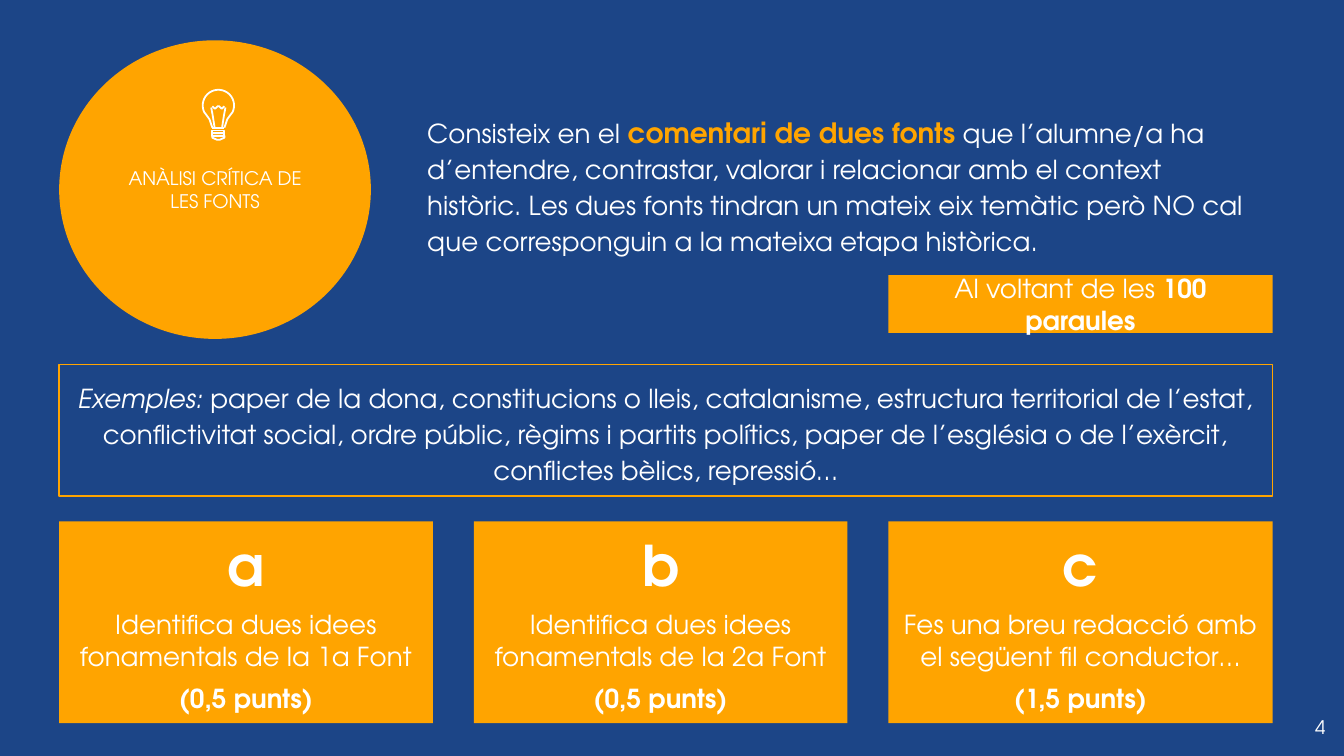
import math

from lxml import etree
from pptx import Presentation
from pptx.dml.color import RGBColor
from pptx.enum.shapes import MSO_CONNECTOR, MSO_SHAPE
from pptx.enum.text import MSO_ANCHOR, MSO_AUTO_SIZE, PP_ALIGN
from pptx.oxml.ns import qn
from pptx.util import Pt

LEFT, CENTER, RIGHT = PP_ALIGN.LEFT, PP_ALIGN.CENTER, PP_ALIGN.RIGHT
TOP, MIDDLE = MSO_ANCHOR.TOP, MSO_ANCHOR.MIDDLE
RECTANGLE, OVAL = MSO_SHAPE.RECTANGLE, MSO_SHAPE.OVAL

FONT = "TeX Gyre Adventor"
COLORS = {"background": "1C4587", "accent": "FFA400", "text": "FFFFFF"}

# Each paragraph is a list of (text, run format) pairs.
TITLE = [[("ANÀLISI CRÍTICA DE LES FONTS", {})]]
DESCRIPTION = [[
    ("Consisteix en el ", {}),
    ("comentari de dues fonts", {"bold": True, "size": 15, "color": "accent"}),
    (" que l’alumne/a ha d’entendre, contrastar, valorar i relacionar amb el "
     "context històric. Les dues fonts tindran un mateix eix temàtic però NO "
     "cal que corresponguin a la mateixa etapa històrica.", {}),
]]
LENGTH = [[("Al voltant de les ", {}), ("100 paraules", {"bold": True})]]
EXAMPLES = [[
    ("Exemples:", {"italic": True}),
    (" paper de la dona, constitucions o lleis, catalanisme, estructura "
     "territorial de l’estat, conflictivitat social, ordre públic, règims i "
     "partits polítics, paper de l’església o de l’exèrcit, conflictes "
     "bèlics, repressió…", {}),
]]
QUESTIONS = [
    ("a", "Identifica dues idees fonamentals de la 1a Font", "(0,5 punts)"),
    ("b", "Identifica dues idees fonamentals de la 2a Font", "(0,5 punts)"),
    ("c", "Fes una breu redacció amb el següent fil conductor…", "(1,5 punts)"),
]
PAGE_NUMBER = [[("4", {})]]

SLIDE_W, SLIDE_H = 720, 405
LEFT_EDGE, RIGHT_EDGE = 31.7, 681.8
CARD_W, CARD_PITCH = 200.2, 222.1
CARD_TOP, CARD_H = 279.4, 108
LAST_CARD_LEFT = LEFT_EDGE + 2 * CARD_PITCH
CIRCLE = (LEFT_EDGE, 21.6, 167, 160)

BULB_X, GLASS_Y, GLASS_R = 117, 56.5, 8.4
BASE_HALF_W, BASE_TOP = 3.2, 68.4


def rgb(name):
    return RGBColor.from_string(COLORS[name])


def write_text(shape, paragraphs, size=14, align=CENTER, anchor=MIDDLE,
               before=0, first_before=0, spacing=1.0):
    frame = shape.text_frame
    frame.word_wrap = True
    frame.auto_size = MSO_AUTO_SIZE.NONE
    frame.vertical_anchor = anchor
    frame.margin_left = frame.margin_right = Pt(7.2)
    frame.margin_top = frame.margin_bottom = Pt(7.2)
    for index, runs in enumerate(paragraphs):
        paragraph = frame.add_paragraph() if index else frame.paragraphs[0]
        paragraph.alignment = align
        paragraph.line_spacing = spacing
        paragraph.space_before = Pt(before if index else first_before)
        for text, style in runs:
            run = paragraph.add_run()
            run.text = text
            run.font.name = FONT
            run.font.size = Pt(style.get("size", size))
            run.font.bold = style.get("bold", False)
            run.font.italic = style.get("italic", False)
            run.font.color.rgb = rgb(style.get("color", "text"))


def add_panel(slide, kind, box, outlined=False):
    panel = slide.shapes.add_shape(kind, *map(Pt, box))
    panel.shadow.inherit = False
    if outlined:
        panel.fill.background()
        panel.line.color.rgb = rgb("accent")
        panel.line.width = Pt(0.75)
    else:
        panel.fill.solid()
        panel.fill.fore_color.rgb = rgb("accent")
        panel.line.fill.background()
    return panel


def add_text_box(slide, box, paragraphs, **style):
    write_text(slide.shapes.add_textbox(*map(Pt, box)), paragraphs, **style)


def mirror(points):
    """Reflect points across the bulb's axis, in reverse order."""
    return [(2 * BULB_X - x, y) for x, y in reversed(points)]


def bulb_strokes():
    """Return (points, closed) for every outline of the bulb."""
    left, right = BULB_X - BASE_HALF_W, BULB_X + BASE_HALF_W
    neck = [(right, BASE_TOP), (121, 66.2), (121.7, 64), (123.5, 61.5)]
    arc = [(BULB_X + GLASS_R * math.cos(math.radians(angle)),
            GLASS_Y + GLASS_R * math.sin(math.radians(angle)))
           for angle in range(25, -206, -10)]
    support = [(115, BASE_TOP), (114, 61.9), (113.2, 57.6)]
    half_filament = [(113.8, 56.9), (115.2, 58.3), (116.6, 56.9)]
    cap = [(left, 72.7), (left, 73.8), (116.3, 74.9)]
    rings = [([(left, y), (right, y), (right, y + 1.4), (left, y + 1.4)], True)
             for y in (69.9, 71.3)]
    return rings + [
        (neck + arc + mirror(neck), False),
        (support, False),
        (mirror(support), False),
        (half_filament + mirror(half_filament), False),
        (cap + mirror(cap), True),
    ]


def draw_bulb(slide):
    bulb = slide.shapes.add_group_shape().shapes
    strokes = []
    for points, closed in bulb_strokes():
        grid = [(x * 100, y * 100) for x, y in points]
        builder = bulb.build_freeform(*grid[0], scale=Pt(0.01))
        builder.add_line_segments(grid[1:], close=closed)
        outline = builder.convert_to_shape()
        outline.fill.background()
        outline.shadow.inherit = False
        strokes.append(outline)
    base = bulb.add_connector(
        MSO_CONNECTOR.STRAIGHT, Pt(BULB_X - BASE_HALF_W), Pt(BASE_TOP),
        Pt(BULB_X + BASE_HALF_W), Pt(BASE_TOP))
    etree.SubElement(base._element.spPr, qn("a:effectLst"))
    for stroke in strokes + [base]:
        stroke.line.color.rgb = rgb("text")
        stroke.line.width = Pt(0.96)


def place_title(slide):
    """Set the title in the circle's inscribed rectangle, above the circle."""
    circle = add_panel(slide, OVAL, CIRCLE)
    title = slide.shapes.title
    title._element.addprevious(circle._element)
    left, top, width, height = CIRCLE
    inner_w, inner_h = width / math.sqrt(2), height / math.sqrt(2)
    title.left, title.top = Pt(left + (width - inner_w) / 2), Pt(top + (height - inner_h) / 2)
    title.width, title.height = Pt(inner_w), Pt(inner_h)
    write_text(title, TITLE, size=10)


def add_cards(slide):
    for index, (letter, task, points) in enumerate(QUESTIONS):
        left = LEFT_EDGE + index * CARD_PITCH
        is_last = index == len(QUESTIONS) - 1
        width = RIGHT_EDGE - left if is_last else CARD_W
        card = add_panel(slide, RECTANGLE, (left, CARD_TOP, width, CARD_H))
        write_text(card, [[(letter, {"size": 30, "bold": True})],
                          [(task, {})],
                          [(points, {"bold": True})]], before=6)


def main():
    deck = Presentation()
    deck.slide_width, deck.slide_height = Pt(SLIDE_W), Pt(SLIDE_H)
    slide = deck.slides.add_slide(deck.slide_layouts[5])
    slide.background.fill.solid()
    slide.background.fill.fore_color.rgb = rgb("background")

    place_title(slide)
    draw_bulb(slide)
    add_text_box(slide, (221.8, 51.8, 456.5, 100.8), DESCRIPTION, align=LEFT,
                 anchor=TOP, first_before=6, spacing=1.15)
    length = add_panel(slide, RECTANGLE, (
        LAST_CARD_LEFT, 147.4, RIGHT_EDGE - LAST_CARD_LEFT, 31))
    write_text(length, LENGTH, first_before=6)
    examples = add_panel(slide, RECTANGLE, (
        LEFT_EDGE, 195.3, RIGHT_EDGE - LEFT_EDGE, 70.4), outlined=True)
    write_text(examples, EXAMPLES, anchor=TOP, first_before=6, spacing=1.15)
    add_cards(slide)
    add_text_box(slide, (673.9, 373.9, 43.2, 31), PAGE_NUMBER, size=10, align=RIGHT)
    deck.save("out.pptx")


if __name__ == "__main__":
    main()
